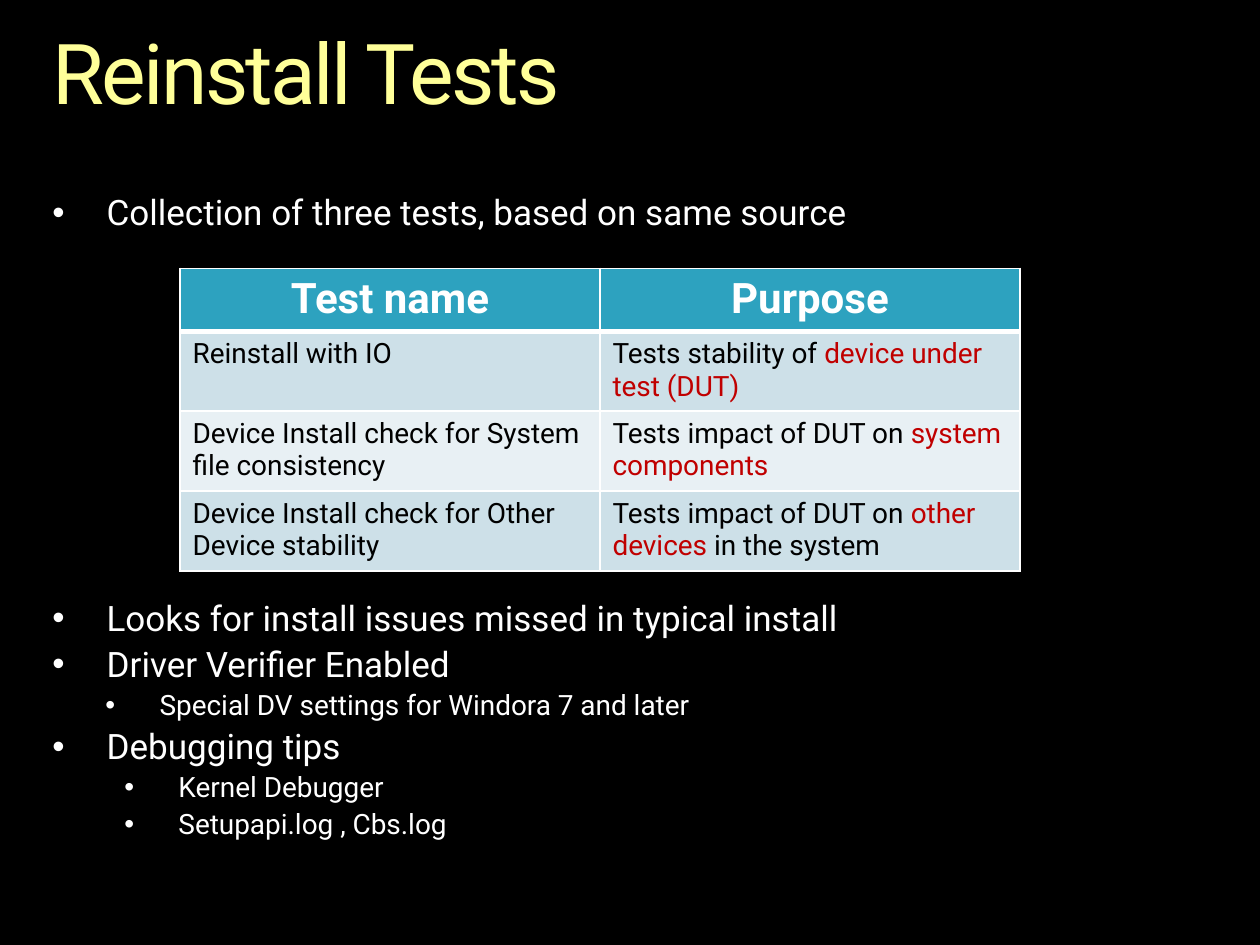
from dataclasses import dataclass
from typing import NamedTuple

from lxml.etree import SubElement
from pptx import Presentation
from pptx.dml.color import RGBColor
from pptx.enum.text import PP_ALIGN
from pptx.oxml.ns import qn
from pptx.util import Inches, Pt


@dataclass(frozen=True)
class Theme:
    font: str = "Roboto"
    back: str = "000000"
    title: str = "FFFF99"
    light: str = "FFFFFF"
    dark: str = "000000"
    mark: str = "C00000"
    head: str = "2DA2BF"
    bands: tuple = ("CDE0E8", "E8F0F4")
    big: int = 48
    top: int = 24
    main: int = 20
    sub: int = 16
    lead: float = 0.9
    gap: float = 0.23


class Item(NamedTuple):
    text: str
    size: int
    inset: float
    level: int = 0


class Part(NamedTuple):
    text: str
    mark: bool = False


T = Theme()
WIDE, HIGH = Inches(10), Inches(7.5)
LEFT, SPAN = 1 / 24, 22 / 24
HANG = 0.43

INTRO = [Item("Collection of three tests, based on same source", T.main, HANG)]
NOTES = [
    Item("Looks for install issues missed in typical install", T.main, HANG),
    Item("Driver Verifier Enabled", T.main, HANG),
    Item("Special DV settings for Windora 7 and later", T.sub, 0.85, 1),
    Item("Debugging tips", T.main, HANG),
    Item("Kernel Debugger", T.sub, 1, 1),
    Item("Setupapi.log , Cbs.log", T.sub, 1, 1),
]
HEADS = ["Test name", "Purpose"]
TESTS = [
    ("Reinstall with IO",
     [Part("Tests stability of "), Part("device under test (DUT)", True)]),
    ("Device Install check for System file consistency",
     [Part("Tests impact of DUT on "), Part("system components", True)]),
    ("Device Install check for Other Device stability",
     [Part("Tests impact of DUT on "), Part("other devices", True),
      Part(" in the system")]),
]


def write(para, text: str, *, size: int, color: str,
          bold: bool = False, track: int = 0) -> None:
    run = para.add_run()
    run.text = text
    font = run.font
    font.name, font.size, font.bold = T.font, Pt(size), bold
    font.color.rgb = RGBColor.from_string(color)
    if track:
        run._r.get_or_add_rPr().set("spc", str(track))


def add_box(slide, top: float, high: float):
    box = slide.shapes.add_textbox(
        int(WIDE * LEFT), int(HIGH * top), int(WIDE * SPAN), int(HIGH * high))
    frame = box.text_frame
    frame.word_wrap = True
    frame.margin_left = frame.margin_right = 0
    frame.margin_top = frame.margin_bottom = 0
    return frame


def add_list(slide, items: list[Item], top: float, high: float) -> None:
    frame = add_box(slide, top, high)
    for i, item in enumerate(items):
        para = frame.add_paragraph() if i else frame.paragraphs[0]
        props = para._p.get_or_add_pPr()
        props.set("marL", str(Inches(item.inset)))
        props.set("indent", str(-Inches(HANG)))
        SubElement(props, qn("a:buFont")).set("typeface", "Arial")
        SubElement(props, qn("a:buChar")).set("char", "•")
        para.level = item.level
        para.line_spacing = T.lead
        if i:
            para.space_before = Pt(item.size * T.gap)
        write(para, item.text, size=item.size, color=T.light)


def paint(cell, fill: str, base: float = 1, roof: float = 1) -> None:
    props = cell._tc.get_or_add_tcPr()
    for side, width in (("L", 1), ("R", 1), ("T", roof), ("B", base)):
        line = SubElement(props, qn(f"a:ln{side}"), w=str(Pt(width)))
        solid = SubElement(line, qn("a:solidFill"))
        SubElement(solid, qn("a:srgbClr"), val=T.light)
    cell.fill.solid()
    cell.fill.fore_color.rgb = RGBColor.from_string(fill)


def add_tests(slide) -> None:
    table = slide.shapes.add_table(
        len(TESTS) + 1, len(HEADS), int(WIDE / 7), int(HIGH * 0.284),
        int(WIDE * 2 / 3), Inches(2.35)).table
    for i, row in enumerate(table.rows):
        row.height = Inches(0.62 if i else 0.49)
    for j, name in enumerate(HEADS):
        cell = table.cell(0, j)
        paint(cell, T.head, base=3)
        para = cell.text_frame.paragraphs[0]
        para.alignment = PP_ALIGN.CENTER
        write(para, name, size=T.top, color=T.light, bold=True)
    for i, (name, goal) in enumerate(TESTS):
        for j, parts in enumerate(([Part(name)], goal)):
            cell = table.cell(i + 1, j)
            paint(cell, T.bands[i % 2], roof=1 if i else 3)
            para = cell.text_frame.paragraphs[0]
            for part in parts:
                write(para, part.text, size=T.sub,
                      color=T.mark if part.mark else T.dark)


def main() -> None:
    deck = Presentation()
    deck.slide_width, deck.slide_height = WIDE, HIGH
    slide = deck.slides.add_slide(deck.slide_layouts[6])
    slide.background.fill.solid()
    slide.background.fill.fore_color.rgb = RGBColor.from_string(T.back)

    title = add_box(slide, 1 / 30, 0.1).paragraphs[0]
    title.line_spacing = T.lead
    write(title, "Reinstall Tests", size=T.big, color=T.title, track=-150)
    add_list(slide, INTRO, 0.207, 0.04)
    add_tests(slide)
    add_list(slide, NOTES, 0.636, 0.268)
    deck.save("out.pptx")


if __name__ == "__main__":
    main()
